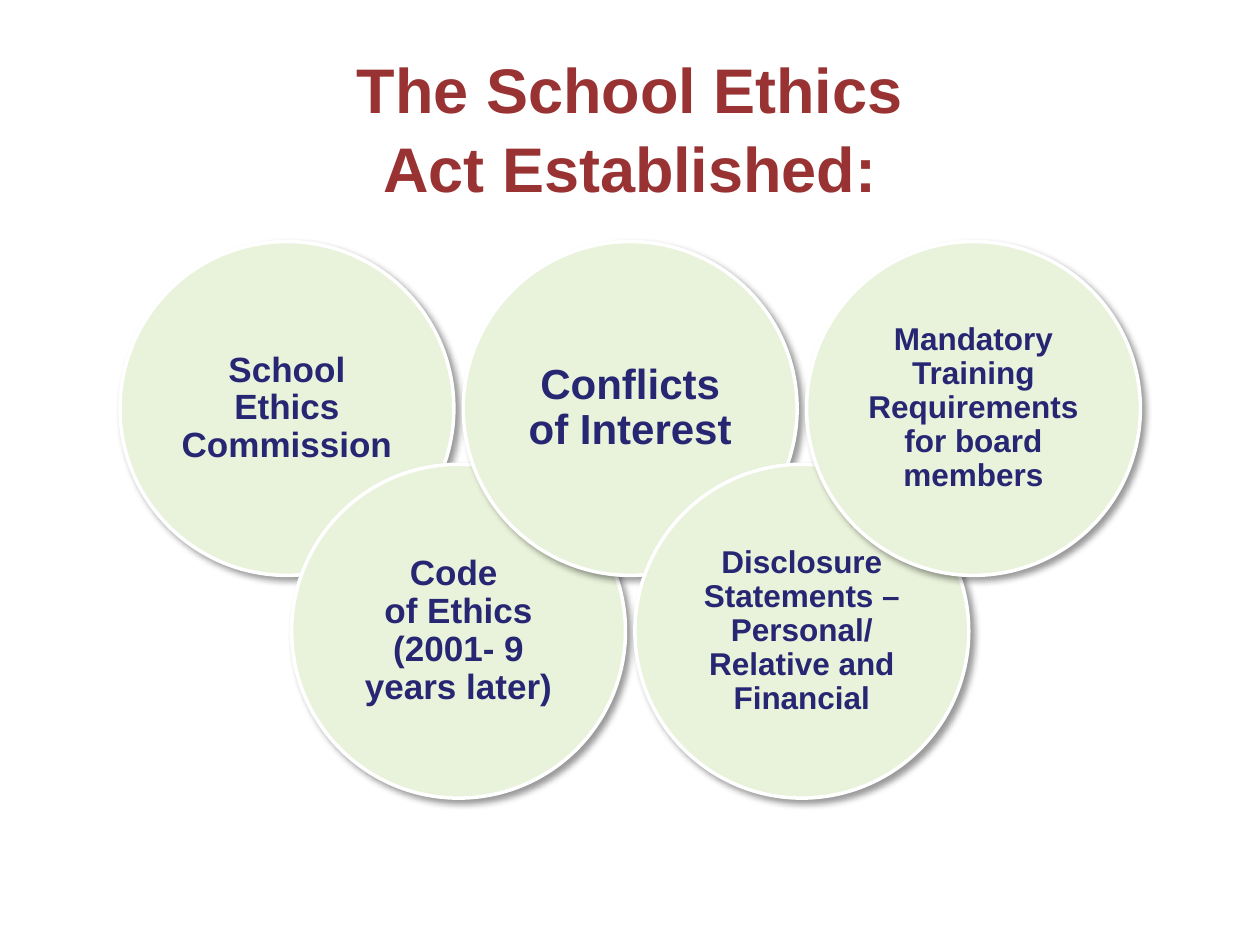
from lxml.etree import SubElement
from pptx import Presentation
from pptx.dml.color import RGBColor
from pptx.enum.shapes import MSO_SHAPE
from pptx.enum.text import MSO_ANCHOR, PP_ALIGN
from pptx.oxml.ns import qn
from pptx.util import Cm, Pt

CIRCLES = [
    ("School Ethics Commission", 20, 0.2),
    ("Code \nof Ethics (2001- 9 years later)", 20, 0.2),
    ("Conflicts of Interest", 24, 0.25),
    ("Disclosure Statements – Personal/\nRelative and Financial", 18, 0.18),
    ("Mandatory Training Requirements for board members", 18, 0.18),
]


def rgb(value):
    """Turn a hex string into a colour."""
    return RGBColor.from_string(value)


def set_text(sp, text, size, color, spacing, inset):
    """Write one centred bold paragraph in the middle of a shape."""
    tf = sp.text_frame
    frame = {"word_wrap": True, "vertical_anchor": MSO_ANCHOR.MIDDLE}
    for side in ("left", "top", "right", "bottom"):
        frame[f"margin_{side}"] = Cm(inset)
    for name, value in frame.items():
        setattr(tf, name, value)
    p = tf.paragraphs[0]
    p.text = text
    p.alignment, p.line_spacing = PP_ALIGN.CENTER, spacing
    for r in p.runs:
        for name, value in {"name": "Arial", "size": Pt(size), "bold": True}.items():
            setattr(r.font, name, value)
        r.font.color.rgb = rgb(color)


def add_shadow(sp):
    """Give a shape a soft shadow to the lower right."""
    sp.shadow.inherit = False
    effects = sp._element.spPr.find(qn("a:effectLst"))
    shadow = SubElement(effects, qn("a:outerShdw"), blurRad=str(Pt(4)),
                        dist=str(Pt(3)), dir="2700000", algn="tl", rotWithShape="0")
    color = SubElement(shadow, qn("a:srgbClr"), val="000000")
    SubElement(color, qn("a:alpha"), val="40000")


def add_title(s, left, top, width, height):
    """Place the slide heading."""
    sp = s.shapes.add_textbox(Cm(left), Cm(top), Cm(width), Cm(height))
    set_text(sp, "The School Ethics\nAct Established:", 36, "993333", 1.05, 0.13)


def add_circles(s, left, top, width, height, diameter):
    """Spread overlapping circles over a box, alternating between two rows."""
    step = (width - diameter) / (len(CIRCLES) - 1)
    for i, (text, size, inset) in enumerate(CIRCLES):
        y = top + i % 2 * (height - diameter)
        sp = s.shapes.add_shape(MSO_SHAPE.OVAL, Cm(left + i * step), Cm(y),
                                Cm(diameter), Cm(diameter))
        sp.fill.solid()
        sp.fill.fore_color.rgb = rgb("E9F2DA")
        sp.line.color.rgb = rgb("FFFFFF")
        sp.line.width = Pt(2)
        add_shadow(sp)
        set_text(sp, text, size, "262673", 0.9, inset)


def main():
    """Build and save the slide."""
    prs = Presentation()
    prs.slide_width, prs.slide_height = Cm(25.4), Cm(19.05)
    s = prs.slides.add_slide(prs.slide_layouts[6])
    add_circles(s, 2.42, 4.87, 20.57, 11.22, 6.73)
    add_title(s, 2.54, 1.27, 20.32, 2.54)
    prs.save("out.pptx")


if __name__ == "__main__":
    main()
